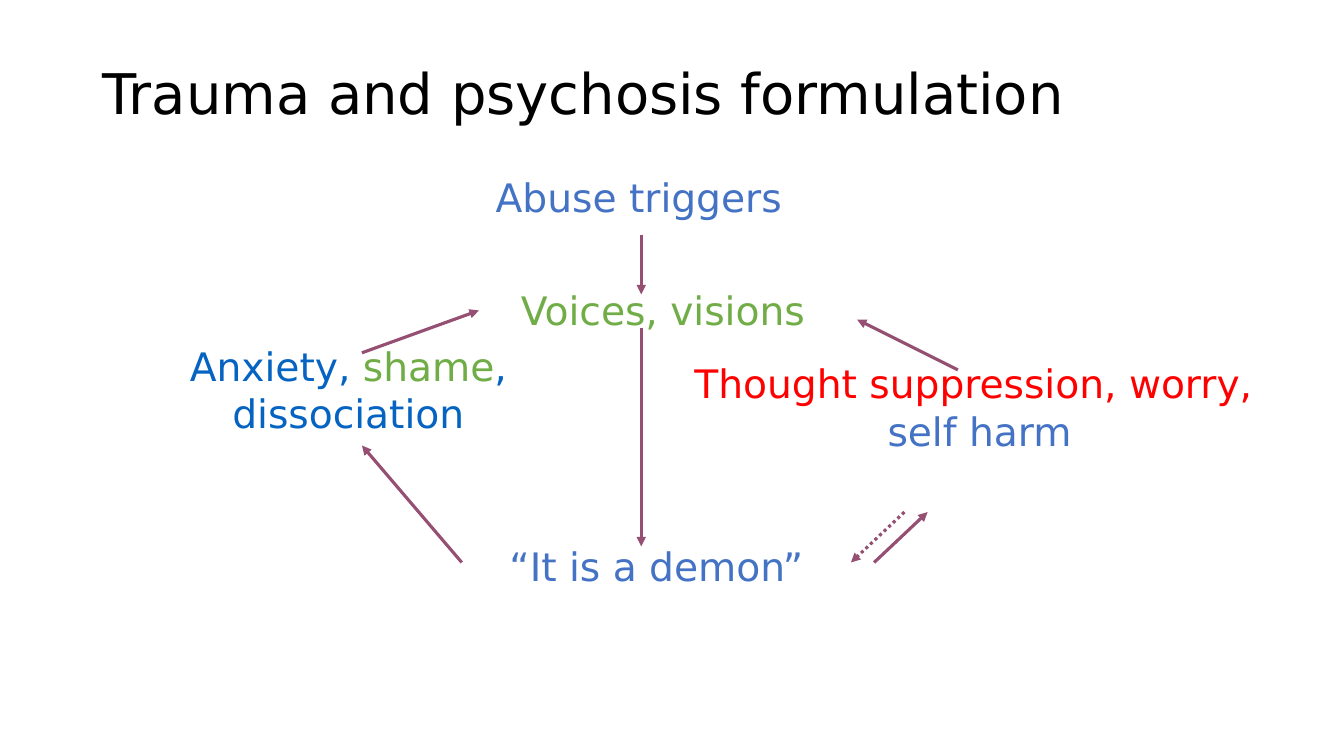
from pptx import Presentation
from pptx import util as u
from pptx.dml.color import RGBColor
from pptx.enum import dml, shapes, text
from pptx.oxml.ns import qn
from lxml import etree

PX = 9144  # EMU per px, 100 px to the inch
FONT = "DejaVu Sans"
BLUE, GREEN, RED = "4472C4", "70AD47", "FF0000"
DEEP_BLUE, PLUM, BLACK = "0563C1", "954F72", "000000"


def px(*lengths):
    return [u.Emu(length * PX) for length in lengths]


def color(value):
    return RGBColor.from_string(value)


def format_run(run, size, value):
    run.font.name = FONT
    run.font.size = u.Pt(size)
    run.font.color.rgb = color(value)


def set_title(slide, words):
    title = slide.shapes.title
    title.left, title.top, title.width, title.height = px(92, 40, 1150, 112)
    frame = title.text_frame
    frame.text = words
    frame.vertical_anchor = text.MSO_ANCHOR.MIDDLE
    paragraph = frame.paragraphs[0]
    paragraph.alignment = text.PP_ALIGN.LEFT
    paragraph.line_spacing = 0.9
    format_run(paragraph.runs[0], 40, BLACK)


def add_label(slide, box, lines, wrap=False):
    """Each line is a list of (words, colour) pieces."""
    frame = slide.shapes.add_textbox(*px(*box)).text_frame
    frame.word_wrap = wrap
    frame.auto_size = text.MSO_AUTO_SIZE.SHAPE_TO_FIT_TEXT
    for index, pieces in enumerate(lines):
        paragraph = frame.add_paragraph() if index else frame.paragraphs[0]
        paragraph.alignment = text.PP_ALIGN.CENTER
        for words, value in pieces:
            run = paragraph.add_run()
            run.text = words
            format_run(run, 28, value)


def add_arrow(slide, start, end, dotted=False):
    arrow = slide.shapes.add_connector(
        shapes.MSO_CONNECTOR.STRAIGHT, *px(*start, *end))
    arrow.line.color.rgb = color(PLUM)
    arrow.line.width = u.Pt(2.25)
    if dotted:
        arrow.line.dash_style = dml.MSO_LINE.ROUND_DOT
    properties = arrow.line._get_or_add_ln()
    etree.SubElement(properties, qn("a:tailEnd"), type="triangle")
    etree.SubElement(arrow._element.spPr, qn("a:effectLst"))


def main():
    presentation = Presentation()
    presentation.slide_width, presentation.slide_height = px(1333, 750)
    slide = presentation.slides.add_slide(presentation.slide_layouts[5])
    set_title(slide, "Trauma and psychosis formulation")

    # Centre column
    add_label(slide, (480, 167, 307, 57), [[("Abuse triggers", BLUE)]])
    add_label(slide, (483, 279, 349, 57), [[("Voices, visions", GREEN)]], wrap=True)
    add_label(slide, (405, 533, 492, 57), [[("“It is a demon”", BLUE)]], wrap=True)

    # Left and right sides
    add_label(slide, (177, 335, 337, 104), [
        [("Anxiety, ", DEEP_BLUE), ("shame", GREEN), (",", DEEP_BLUE)],
        [("dissociation", DEEP_BLUE)]])
    add_label(slide, (673, 352, 597, 104), [
        [("Thought suppression, worry, ", RED)],
        [("self harm", BLUE)]])

    # Arrows of the cycle
    for start, end in [
            ((636, 233), (636, 292)),
            ((636, 325), (636, 542)),
            ((458, 558), (359, 442)),
            ((359, 350), (475, 308)),
            ((950, 367), (850, 317)),
            ((867, 558), (920, 508))]:
        add_arrow(slide, start, end)
    add_arrow(slide, (897, 508), (844, 558), dotted=True)

    presentation.save("out.pptx")


if __name__ == "__main__":
    main()
